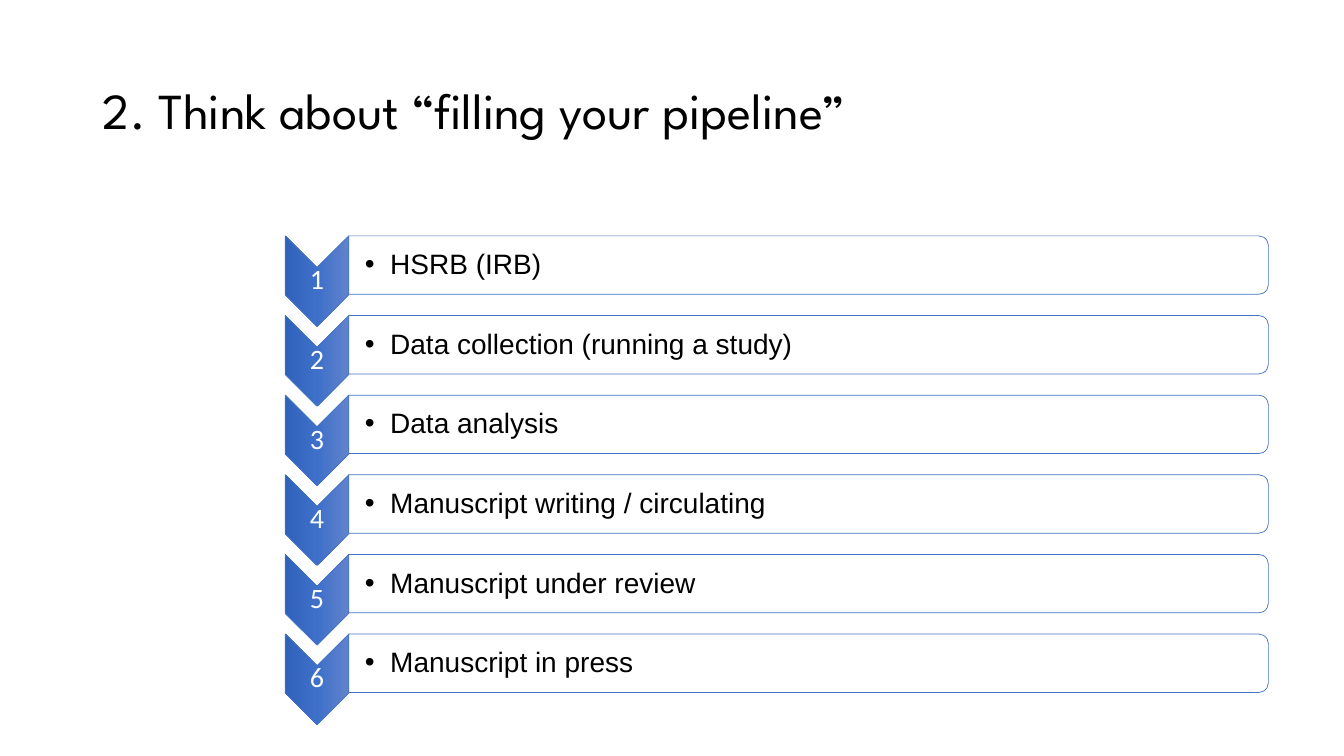
"""Build a slide listing the six stages of a research pipeline."""
import copy
from dataclasses import dataclass

import lxml.etree
import pptx
import pptx.dml.color
import pptx.enum.shapes
import pptx.enum.text
import pptx.oxml.ns
import pptx.util
from pptx.util import Inches

COLORS = {
    "text": "000000",
    "number": "FFFFFF",
    "bar": "FFFFFF",
    "outline": "4472C4",
    "light": "6183CB",
    "middle": "3E70CA",
    "dark": "3062BB",
}
FIRST_TOP = 2.34
STAGE_STEP = 0.79
SHAPES = pptx.enum.shapes.MSO_SHAPE
ALIGN = pptx.enum.text.PP_ALIGN
qn = pptx.oxml.ns.qn


@dataclass
class Stage:
    """One numbered stage of the pipeline."""
    number: int
    label: str

    @property
    def top(self) -> float:
        """Return the top of the stage in inches."""
        return FIRST_TOP + (self.number - 1) * STAGE_STEP


STAGES = [Stage(number, label) for number, label in enumerate((
    "HSRB (IRB)",
    "Data collection (running a study)",
    "Data analysis",
    "Manuscript writing / circulating",
    "Manuscript under review",
    "Manuscript in press",
), start=1)]


def rgb(name: str) -> pptx.dml.color.RGBColor:
    """Return a named colour."""
    return pptx.dml.color.RGBColor.from_string(COLORS[name])


def write(frame, text: str, font: str, size: int, color: str, align):
    """Fill a text frame with one formatted paragraph and return it."""
    frame.text = text
    frame.word_wrap = True
    frame.vertical_anchor = pptx.enum.text.MSO_ANCHOR.MIDDLE
    paragraph = frame.paragraphs[0]
    paragraph.alignment = align
    paragraph.line_spacing = 0.9
    run_font = paragraph.runs[0].font
    run_font.name = font
    run_font.size = pptx.util.Pt(size)
    run_font.color.rgb = rgb(color)
    return paragraph


def add_turned_shape(slide, preset, left: float, top: float, width: float, height: float):
    """Add an outlined shape turned by 90 degrees within its visible frame."""
    shift = (width - height) / 2
    shape = slide.shapes.add_shape(
        preset, Inches(left + shift), Inches(top - shift), Inches(height), Inches(width))
    shape.rotation = 90
    shape.shadow.inherit = False
    shape.line.color.rgb = rgb("outline")
    shape.line.width = pptx.util.Pt(0.5)
    return shape


def add_label(slide, left: float, top: float, width: float, height: float, inset: float):
    """Add a text box with narrow margins and return its text frame."""
    box = slide.shapes.add_textbox(Inches(left), Inches(top), Inches(width), Inches(height))
    frame = box.text_frame
    frame.margin_left = Inches(inset)
    frame.margin_top = frame.margin_right = frame.margin_bottom = Inches(0.01)
    return frame


def shade(chevron) -> None:
    """Give a chevron its three-stop vertical gradient."""
    chevron.fill.gradient()
    chevron.fill.gradient_angle = 270
    stop_list = chevron._element.spPr.find(qn("a:gradFill")).find(qn("a:gsLst"))
    stop_list.insert(1, copy.deepcopy(stop_list[0]))
    for stop, position, name in zip(
            chevron.fill.gradient_stops, (0, 0.5, 1), ("light", "middle", "dark")):
        stop.position = position
        stop.color.rgb = rgb(name)


def add_bullet(paragraph) -> None:
    """Give a paragraph a hanging bullet."""
    paragraph.level = 1
    properties = paragraph._p.get_or_add_pPr()
    properties.set("marL", str(Inches(0.25)))
    properties.set("indent", str(-Inches(0.25)))
    lxml.etree.SubElement(properties, qn("a:buFont"), typeface="Arial")
    lxml.etree.SubElement(properties, qn("a:buChar"), char="•")


def add_stage(slide, stage: Stage) -> None:
    """Draw the chevron, number, bar and label of a stage."""
    chevron = add_turned_shape(slide, SHAPES.CHEVRON, 2.83, stage.top, 0.63, 0.9)
    shade(chevron)
    number = add_label(slide, 2.83, stage.top + 0.31, 0.63, 0.27, 0.01)
    write(number, str(stage.number), "Calibri", 20, "number", ALIGN.CENTER)

    bar = add_turned_shape(slide, SHAPES.ROUND_2_SAME_RECTANGLE, 3.46, stage.top, 9.12, 0.58)
    bar.fill.solid()
    bar.fill.fore_color.rgb = rgb("bar")
    bar_color = bar._element.spPr.find(qn("a:solidFill"))[0]
    lxml.etree.SubElement(bar_color, qn("a:alpha"), val="90000")
    label = add_label(slide, 3.46, stage.top + 0.03, 9.09, 0.53, 0.16)
    add_bullet(write(label, stage.label, "Arial", 20, "text", ALIGN.LEFT))


def main() -> None:
    """Create and save the presentation."""
    presentation = pptx.Presentation()
    presentation.slide_width = Inches(13.33)
    presentation.slide_height = Inches(7.5)
    slide = presentation.slides.add_slide(presentation.slide_layouts[5])

    title = slide.shapes.title
    title.left, title.top = Inches(0.92), Inches(0.4)
    title.width, title.height = Inches(11.5), Inches(1.45)
    write(title.text_frame, "2. Think about “filling your pipeline”",
          "League Spartan", 36, "text", ALIGN.LEFT)

    for stage in STAGES:
        add_stage(slide, stage)
    presentation.save("out.pptx")


if __name__ == "__main__":
    main()
